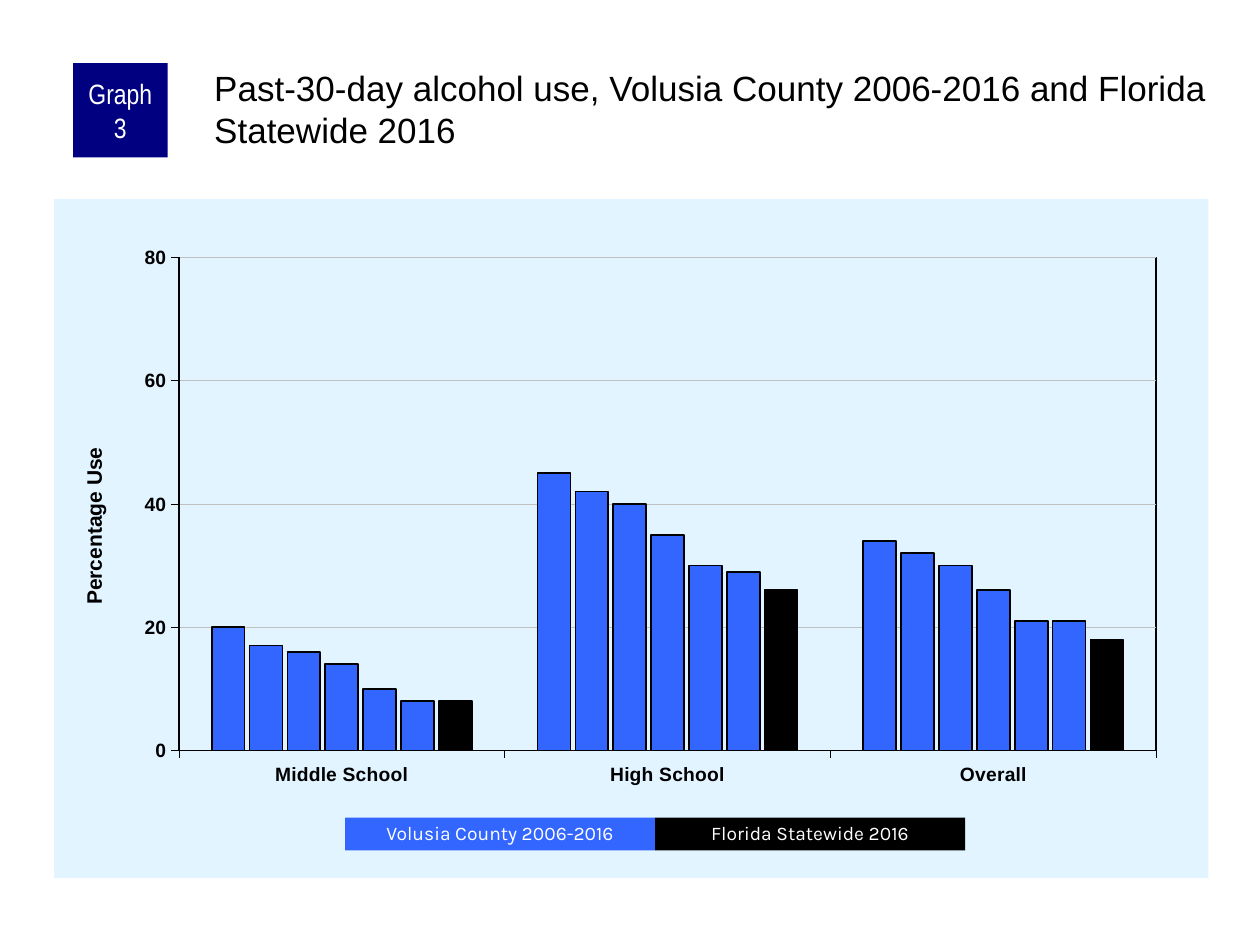
from dataclasses import dataclass

from lxml import etree
from pptx import Presentation
from pptx.chart.data import CategoryChartData
from pptx.dml.color import RGBColor
from pptx.enum.chart import XL_CHART_TYPE, XL_TICK_MARK
from pptx.enum.text import MSO_ANCHOR, PP_ALIGN
from pptx.oxml import parse_xml
from pptx.oxml.ns import nsdecls, qn
from pptx.util import Inches, Pt

COLUMN_CLUSTERED = XL_CHART_TYPE.COLUMN_CLUSTERED
OUTSIDE = XL_TICK_MARK.OUTSIDE
MIDDLE = MSO_ANCHOR.MIDDLE
CENTER = PP_ALIGN.CENTER

BLACK = RGBColor(0x00, 0x00, 0x00)
WHITE = RGBColor(0xFF, 0xFF, 0xFF)
NAVY = RGBColor(0x00, 0x00, 0x80)
BLUE = RGBColor(0x33, 0x66, 0xFF)
PALE = RGBColor(0xE1, 0xF4, 0xFF)
GRAY = RGBColor(0xC0, 0xC0, 0xC0)

CATEGORIES = ("Middle School", "High School", "Overall")
COUNTY = ((20, 45, 34), (17, 42, 32), (16, 40, 30),
          (14, 35, 26), (10, 30, 21), (8, 29, 21))
STATE = (8, 26, 18)

KEY_LEFT, KEY_TOP, KEY_WIDTH, KEY_HEIGHT = 2.74, 6.49, 2.46, 0.26


@dataclass(frozen=True)
class Label:
    text: str
    left: float
    top: float
    width: float
    height: float
    fill: RGBColor
    font: str
    size: int
    margin_x: float = 0.1
    margin_y: float = 0.05
    spacing: float = 1.0


LABELS = [Label("Graph 3", 0.58, 0.5, 0.75, 0.75, NAVY, "Arial Narrow", 16, 0.05, 0)] + [
    Label(text, KEY_LEFT + i * KEY_WIDTH, KEY_TOP, KEY_WIDTH, KEY_HEIGHT,
          fill, "Karla", 11, spacing=0.9)
    for i, (text, fill) in enumerate((("Volusia County 2006-2016", BLUE),
                                      ("Florida Statewide 2016", BLACK)))
]


def style_font(font, name: str, size: int, color: RGBColor, bold: bool = False) -> None:
    font.name, font.size, font.bold = name, Pt(size), bold
    font.color.rgb = color


def style_line(line, color: RGBColor, width: float) -> None:
    line.color.rgb = color
    line.width = Pt(width)


def draw_label(slide, label: Label) -> None:
    s = slide.shapes.add_shape(1, *(Inches(v) for v in (
        label.left, label.top, label.width, label.height)))
    s.shadow.inherit = False
    s.fill.solid()
    s.fill.fore_color.rgb = label.fill
    s.line.fill.background()
    tf = s.text_frame
    tf.text = label.text
    tf.word_wrap = True
    tf.vertical_anchor = MIDDLE
    tf.margin_left = tf.margin_right = Inches(label.margin_x)
    tf.margin_top = tf.margin_bottom = Inches(label.margin_y)
    p = tf.paragraphs[0]
    p.alignment = CENTER
    p.line_spacing = label.spacing
    style_font(p.runs[0].font, label.font, label.size, WHITE)


def draw_heading(slide, text: str) -> None:
    tf = slide.shapes.add_textbox(
        Inches(1.67), Inches(0.5), Inches(7.92), Inches(0.83)).text_frame
    tf.text = text
    tf.word_wrap = True
    tf.margin_left = tf.margin_top = Inches(0.03)
    tf.margin_right = tf.margin_bottom = 0
    style_font(tf.paragraphs[0].runs[0].font, "Arial", 20, BLACK)


def set_layout(parent, index: int, **settings) -> None:
    """Place a chart part by hand, in shares of the chart's size."""
    for old in parent.findall(qn("c:layout")):
        parent.remove(old)
    layout = parse_xml(f"<c:layout {nsdecls('c')}><c:manualLayout/></c:layout>")
    for tag, value in settings.items():
        etree.SubElement(layout[0], qn(f"c:{tag}")).set("val", str(value))
    parent.insert(index, layout)


def area_format(fill: str, line: str):
    return parse_xml(f"<c:spPr {nsdecls('c', 'a')}>{fill}<a:ln w=\"12700\">{line}</a:ln></c:spPr>")


def solid(color: RGBColor) -> str:
    return f'<a:solidFill><a:srgbClr val="{color}"/></a:solidFill>'


def draw_chart(slide) -> None:
    data = CategoryChartData()
    data.categories = CATEGORIES
    for number, values in enumerate((*COUNTY, STATE), 1):
        data.add_series(f"Series {number}", values)
    chart = slide.shapes.add_chart(
        COLUMN_CLUSTERED, Inches(0.43), Inches(1.58), Inches(9.16), Inches(5.39), data).chart
    chart.has_title = chart.has_legend = False
    style_font(chart.font, "Arial", 8, BLACK)

    plot = chart.plots[0]
    plot.gap_width, plot.overlap, plot.vary_by_categories = 200, -15, False
    for number, series in enumerate(plot.series):
        series.format.fill.solid()
        series.format.fill.fore_color.rgb = BLUE if number < len(COUNTY) else BLACK
        style_line(series.format.line, BLACK, 1)

    for axis in (chart.category_axis, chart.value_axis):
        axis.major_tick_mark = OUTSIDE
        style_font(axis.tick_labels.font, "Arial", 11, BLACK, True)
        style_line(axis.format.line, BLACK, 0.25)

    axis = chart.value_axis
    axis.minimum_scale, axis.maximum_scale, axis.major_unit = 0, 80, 20
    style_line(axis.major_gridlines.format.line, GRAY, 0.25)
    title = axis.axis_title
    tf = title.text_frame
    tf.text = "Percentage Use"
    style_font(tf.paragraphs[0].runs[0].font, "Arial", 12, BLACK, True)
    body = tf._txBody.find(qn("a:bodyPr"))
    body.set("rot", "-5400000")
    body.set("vert", "horz")
    set_layout(title._element, 1, xMode="edge", yMode="edge", x=0.02, y=0.36)

    root = chart._chartSpace.find(qn("c:chart"))
    area = root.find(qn("c:plotArea"))
    set_layout(area, 0, layoutTarget="inner", xMode="edge", yMode="edge",
               x=0.108, y=0.086, w=0.847, h=0.726)
    area.append(area_format("<a:noFill/>", solid(BLACK)))
    root.addnext(area_format(solid(PALE), "<a:noFill/>"))


def main() -> None:
    prs = Presentation()
    prs.slide_width, prs.slide_height = Inches(10), Inches(7.5)
    slide = prs.slides.add_slide(prs.slide_layouts[6])
    draw_chart(slide)
    draw_heading(slide, "Past-30-day alcohol use, Volusia County 2006-2016 "
                        "and Florida Statewide 2016")
    for label in LABELS:
        draw_label(slide, label)
    prs.save("out.pptx")


if __name__ == "__main__":
    main()
